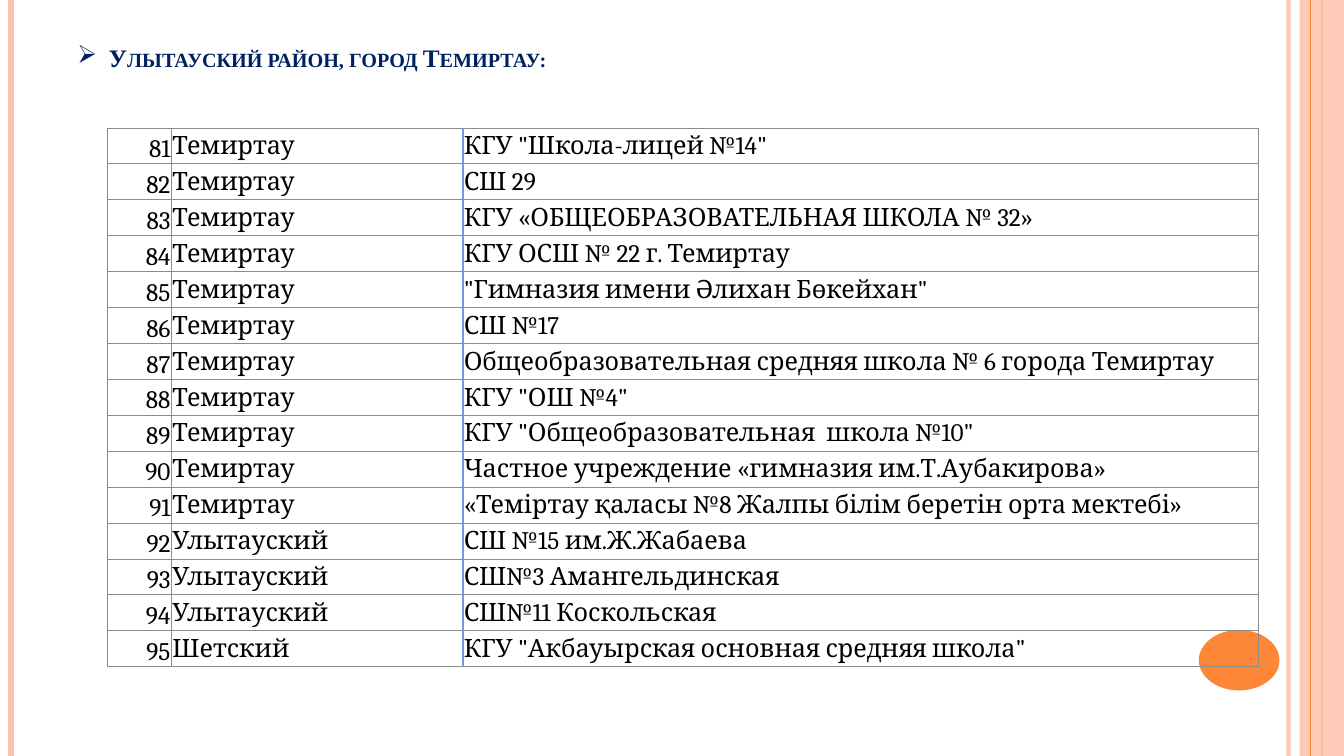
from dataclasses import dataclass

from lxml.etree import SubElement
from pptx import Presentation
from pptx.dml.color import RGBColor
from pptx.enum.shapes import MSO_CONNECTOR as CONN, MSO_SHAPE as SHAPE
from pptx.enum.text import MSO_ANCHOR as ANCHOR, PP_ALIGN as ALIGN
from pptx.oxml.ns import qn
from pptx.util import Inches, Pt

COLORS = {
    "peach": "FEC3AE",
    "orange": "FE8637",
    "grid": "8C8C8C",
    "divider": "7598D9",
    "navy": "002060",
    "black": "000000",
}
HEIGHT = 7.5
FIRST_NUMBER = 81
COL_WIDTHS = (0.63, 2.89, 7.89)
TABLE_HEIGHT = 5.35
SCHOOLS = {
    "Темиртау": (
        'КГУ "Школа-лицей №14"',
        "СШ 29",
        "КГУ «ОБЩЕОБРАЗОВАТЕЛЬНАЯ ШКОЛА № 32»",
        "КГУ ОСШ № 22 г. Темиртау",
        '"Гимназия имени Әлихан Бөкейхан"',
        "СШ №17",
        "Общеобразовательная средняя школа № 6 города Темиртау",
        'КГУ "ОШ №4"',
        'КГУ "Общеобразовательная  школа №10"',
        "Частное учреждение «гимназия им.Т.Аубакирова»",
        "«Теміртау қаласы №8 Жалпы білім беретін орта мектебі»",
    ),
    "Улытауский": (
        "СШ №15 им.Ж.Жабаева",
        "СШ№3 Амангельдинская",
        "СШ№11 Коскольская",
    ),
    "Шетский": ('КГУ "Акбауырская основная средняя школа"',),
}


@dataclass(frozen=True)
class Stripe:
    x: float
    color: str
    width: float
    opacity: int = 100


@dataclass(frozen=True)
class Block:
    kind: SHAPE
    x: float
    y: float
    w: float
    h: float
    color: str
    opacity: int = 100


DECOR = (
    Stripe(12.78, "peach", 3, 93),
    Stripe(0.11, "peach", 4.5),
    Stripe(13.11, "orange", 1.5),
    Block(SHAPE.RECTANGLE, 12.89, 0, 0.44, HEIGHT, "peach", 87),
    Stripe(13, "orange", 0.75),
    Block(SHAPE.OVAL, 11.89, 6.25, 0.8, 0.6, "orange"),
)


def rgb(name: str) -> RGBColor:
    return RGBColor.from_string(COLORS[name])


def set_opacity(element, opacity: int) -> None:
    if opacity < 100:
        color = next(element.iter(qn("a:srgbClr")))
        SubElement(color, qn("a:alpha"), val=str(opacity * 1000))


def draw_stripe(slide, stripe: Stripe) -> None:
    x = Inches(stripe.x)
    line = slide.shapes.add_connector(CONN.STRAIGHT, x, 0, x, Inches(HEIGHT))
    line.line.color.rgb = rgb(stripe.color)
    line.line.width = Pt(stripe.width)
    sp_pr = line._element.spPr
    set_opacity(sp_pr, stripe.opacity)
    SubElement(sp_pr, qn("a:effectLst"))


def draw_block(slide, block: Block) -> None:
    box = map(Inches, (block.x, block.y, block.w, block.h))
    sp = slide.shapes.add_shape(block.kind, *box)
    sp.shadow.inherit = False
    sp.fill.solid()
    sp.fill.fore_color.rgb = rgb(block.color)
    sp.line.fill.background()
    set_opacity(sp._element.spPr, block.opacity)


def add_run(p, text: str, font: str, color: str):
    r = p.add_run()
    r.text = text
    r.font.name = font
    r.font.size = Pt(18)
    r.font.color.rgb = rgb(color)
    return r


def set_border(cell, side: str, color: str, width: float) -> None:
    tc_pr = cell._tc.get_or_add_tcPr()
    ln = SubElement(tc_pr, qn(f"a:ln{side}"), w=str(Pt(width)))
    fill = SubElement(ln, qn("a:solidFill"))
    SubElement(fill, qn("a:srgbClr"), val=COLORS[color])


def fill_cell(cell, text: str, col: int) -> None:
    for side in "LRTB":
        if (col, side) in ((1, "R"), (2, "L")):
            set_border(cell, side, "divider", 1.5)
        else:
            set_border(cell, side, "grid", 0.75)
    cell.fill.background()
    cell.margin_left = cell.margin_right = cell.margin_top = Inches(0.01)
    cell.margin_bottom = 0
    cell.vertical_anchor = ANCHOR.MIDDLE if col else ANCHOR.BOTTOM
    p = cell.text_frame.paragraphs[0]
    p.alignment = ALIGN.LEFT if col else ALIGN.RIGHT
    add_run(p, text, "Cambria", "black")


def draw_table(slide) -> None:
    schools = [(area, name) for area, names in SCHOOLS.items() for name in names]
    frame = slide.shapes.add_table(
        len(schools), len(COL_WIDTHS), Inches(1.07), Inches(1.27),
        Inches(sum(COL_WIDTHS)), Inches(TABLE_HEIGHT))
    table = frame.table
    table.first_row = table.horz_banding = False
    for column, width in zip(table.columns, COL_WIDTHS):
        column.width = Inches(width)
    for i, school in enumerate(schools):
        table.rows[i].height = Inches(TABLE_HEIGHT / len(schools))
        for col, text in enumerate((str(FIRST_NUMBER + i), *school)):
            fill_cell(table.cell(i, col), text, col)


def draw_title(slide) -> None:
    box = map(Inches, (0.67, 0.3, 10.89, 0.47))
    tf = slide.shapes.add_textbox(*box).text_frame
    tf.word_wrap = True
    tf.vertical_anchor = ANCHOR.BOTTOM
    p = tf.paragraphs[0]
    p_pr = p._p.get_or_add_pPr()
    p_pr.set("marL", str(Inches(0.31)))
    p_pr.set("indent", str(-Inches(0.31)))
    SubElement(p_pr, qn("a:buChar"), char="➢")
    r = add_run(p, "Улытауский район, город Темиртау:", "Times New Roman", "navy")
    r.font.bold = True
    r._r.get_or_add_rPr().set("cap", "small")


def main() -> None:
    """Build the slide listing the schools of Temirtau and nearby districts."""
    prs = Presentation()
    prs.slide_width, prs.slide_height = Inches(13.33), Inches(HEIGHT)
    slide = prs.slides.add_slide(prs.slide_layouts[6])
    for item in DECOR:
        if isinstance(item, Stripe):
            draw_stripe(slide, item)
        else:
            draw_block(slide, item)
    draw_table(slide)
    draw_title(slide)
    prs.save("out.pptx")


if __name__ == "__main__":
    main()
